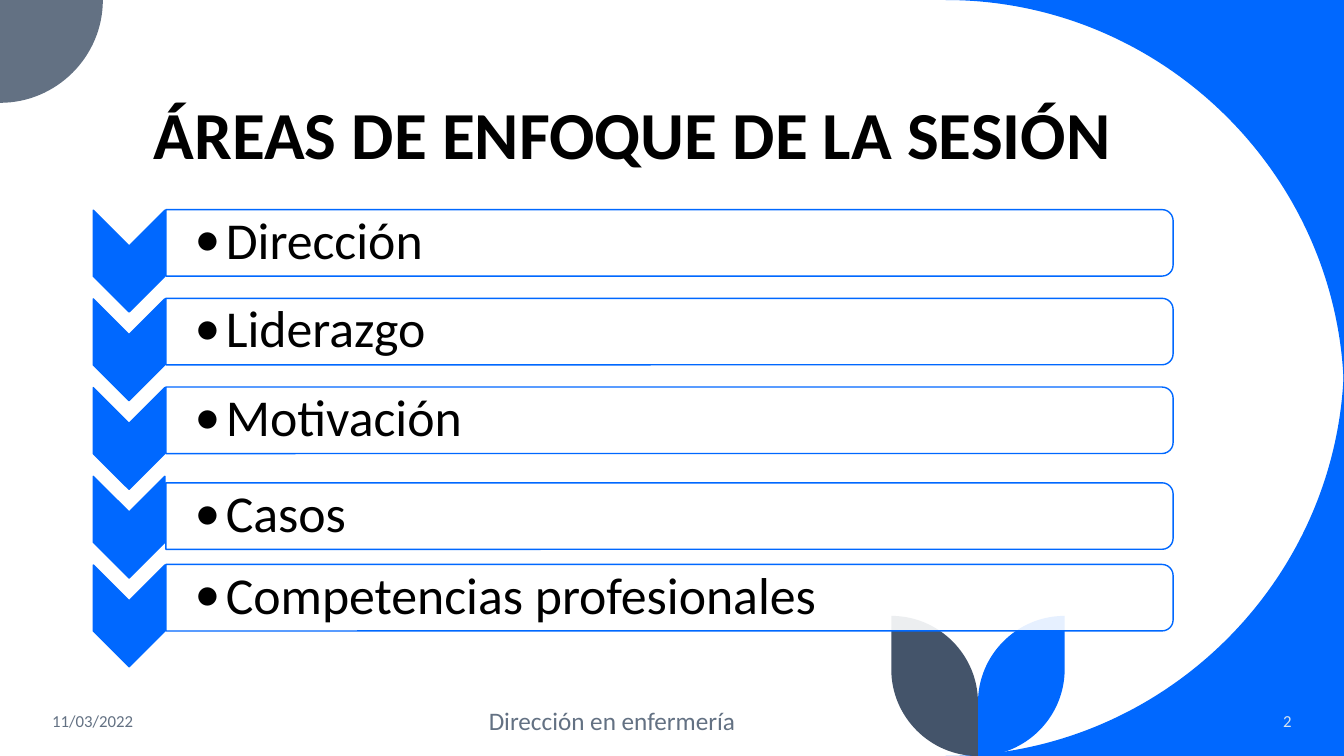
from dataclasses import dataclass

from lxml import etree
from pptx import Presentation
from pptx.dml.color import RGBColor
from pptx.enum.shapes import MSO_SHAPE
from pptx.enum.text import MSO_ANCHOR, PP_ALIGN
from pptx.oxml.ns import qn
from pptx.shapes.autoshape import Shape
from pptx.slide import Slide
from pptx.util import Inches, Pt

CHEVRON = MSO_SHAPE.CHEVRON
ROUNDED_TOP = MSO_SHAPE.ROUND_2_SAME_RECTANGLE
MIDDLE, BOTTOM = MSO_ANCHOR.MIDDLE, MSO_ANCHOR.BOTTOM
LEFT, CENTER, RIGHT = PP_ALIGN.LEFT, PP_ALIGN.CENTER, PP_ALIGN.RIGHT

Point = tuple[float, float]
Box = tuple[float, float, float, float]


@dataclass(frozen=True)
class Theme:
    font: str = "Calibri"
    blue: str = "0068FF"
    slate: str = "637183"
    navy: str = "44546A"
    pale: str = "DAE5EF"
    white: str = "FFFFFF"
    black: str = "000000"
    title_size: float = 48
    area_size: float = 37
    footer_size: float = 18
    small_size: float = 12


@dataclass(frozen=True)
class Area:
    name: str
    nudge: float = 0


@dataclass(frozen=True)
class Stroke:
    end: Point
    bend: Point | None = None


@dataclass(frozen=True)
class Ornament:
    start: Point
    strokes: list[Stroke]
    color: str


THEME = Theme()
WIDTH, HEIGHT = 13.33, 7.5
QUARTER_ARC = 0.55
FIRST_ROW_CENTER, ROW_PITCH = 2.41, 0.88
CHEVRON_DROP = 0.18
BULLET_INDENT = 0.31
AREAS = [
    Area("Dirección"),
    Area("Liderazgo"),
    Area("Motivación"),
    Area("Casos", nudge=0.07),
    Area("Competencias profesionales"),
]


def quarter(corner: Point, start: Point, end: Point, bend: Point, color: str) -> Ornament:
    return Ornament(corner, [Stroke(start), Stroke(end, bend)], color)


def leaf(stem: float, tip: float, color: str) -> Ornament:
    top, shoulder, notch = 6.11, 6.64, 6.97
    return Ornament((tip, top), [
        Stroke((tip, shoulder)),
        Stroke((stem, HEIGHT), bend=(tip, HEIGHT)),
        Stroke((stem, notch)),
        Stroke((tip, top), bend=(stem, top)),
    ], color)


def ornaments() -> list[Ornament]:
    sweep, disc, stem, leaf_width = 3.95, 1.02, 9.7, 0.86
    edge = WIDTH - sweep
    top_right, bottom_right = (WIDTH, 0), (WIDTH, HEIGHT)
    return [
        quarter(top_right, (edge, 0), (WIDTH, sweep), top_right, THEME.blue),
        quarter(bottom_right, (WIDTH, HEIGHT - sweep), (edge, HEIGHT), bottom_right,
                THEME.blue),
        quarter((0, 0), (disc, 0), (0, disc), (disc, disc), THEME.slate),
        leaf(stem, stem + leaf_width, THEME.blue),
        leaf(stem, stem - leaf_width, THEME.navy),
    ]


def paint(shape: Shape, fill: str, line: str | None = None, alpha: int = 100) -> None:
    shape.shadow.inherit = False
    shape.fill.solid()
    shape.fill.fore_color.rgb = RGBColor.from_string(fill)
    if alpha < 100:
        color = shape.fill._xPr.find(qn("a:solidFill"))[0]
        etree.SubElement(color, qn("a:alpha"), val=str(alpha * 1000))
    if line:
        shape.line.color.rgb = RGBColor.from_string(line)
        shape.line.width = Pt(1)
    else:
        shape.line.fill.background()


def toward(origin: Point, target: Point) -> Point:
    return (origin[0] + QUARTER_ARC * (target[0] - origin[0]),
            origin[1] + QUARTER_ARC * (target[1] - origin[1]))


def add_ornament(slide: Slide, ornament: Ornament) -> None:
    builder = slide.shapes.build_freeform(*map(Inches, ornament.start))
    builder.add_line_segments([tuple(map(Inches, s.end)) for s in ornament.strokes])
    shape = builder.convert_to_shape()
    segments = list(shape._element.iter(qn("a:lnTo")))
    position = ornament.start
    for stroke, segment in zip(ornament.strokes, segments):
        if stroke.bend:
            curve = etree.Element(qn("a:cubicBezTo"))
            controls = toward(position, stroke.bend), toward(stroke.end, stroke.bend)
            for x, y in (*controls, stroke.end):
                etree.SubElement(curve, qn("a:pt"), x=str(Inches(x) - shape.left),
                                 y=str(Inches(y) - shape.top))
            segment.getparent().replace(segment, curve)
        position = stroke.end
    paint(shape, ornament.color)


def add_turned(slide: Slide, kind: MSO_SHAPE, center: Point, length: float,
               thickness: float) -> Shape:
    left, top = center[0] - length / 2, center[1] - thickness / 2
    shape = slide.shapes.add_shape(
        kind, Inches(left), Inches(top), Inches(length), Inches(thickness))
    shape.rotation = 90
    return shape


def add_text(slide: Slide, text: str, box: Box, *, size: float, color: str,
             bold: bool = False, align: PP_ALIGN = LEFT, anchor: MSO_ANCHOR = MIDDLE,
             spacing: float = 1, insets: Box = (0.1, 0.05, 0.1, 0.05),
             bullet: bool = False) -> None:
    frame = slide.shapes.add_textbox(*map(Inches, box)).text_frame
    frame.word_wrap = True
    frame.vertical_anchor = anchor
    frame.margin_left, frame.margin_top, frame.margin_right, frame.margin_bottom = map(
        Inches, insets)
    paragraph = frame.paragraphs[0]
    paragraph.alignment = align
    paragraph.line_spacing = spacing
    if bullet:
        properties = paragraph._p.get_or_add_pPr()
        properties.set("marL", str(Inches(BULLET_INDENT)))
        properties.set("indent", str(-Inches(BULLET_INDENT)))
        etree.SubElement(properties, qn("a:buFont"), typeface=THEME.font)
        etree.SubElement(properties, qn("a:buChar"), char="•")
    run = paragraph.add_run()
    run.text = text
    run.font.name = THEME.font
    run.font.size = Pt(size)
    run.font.bold = bold
    run.font.color.rgb = RGBColor.from_string(color)


def add_area(slide: Slide, area: Area, row: int) -> None:
    row_center = FIRST_ROW_CENTER + row * ROW_PITCH
    chevron = add_turned(slide, CHEVRON, (1.28, row_center + CHEVRON_DROP), 1.01, 0.71)
    paint(chevron, THEME.blue, THEME.blue)
    bar_center = row_center + area.nudge
    bar = add_turned(slide, ROUNDED_TOP, (6.64, bar_center), 0.66, 9.99)
    paint(bar, THEME.white, THEME.blue, alpha=90)
    add_text(slide, area.name, (1.64, bar_center - 0.3, 9.95, 0.59),
             size=THEME.area_size, color=THEME.black, spacing=0.9,
             insets=(0.29, 0.03, 0.03, 0.03), bullet=True)


def main() -> None:
    deck = Presentation()
    deck.slide_width, deck.slide_height = Inches(WIDTH), Inches(HEIGHT)
    slide = deck.slides.add_slide(deck.slide_layouts[6])
    for ornament in ornaments():
        add_ornament(slide, ornament)
    add_text(slide, "ÁREAS DE ENFOQUE DE LA SESIÓN", (0.93, 0, 10.69, 1.78),
             size=THEME.title_size, color=THEME.black, bold=True,
             align=CENTER, anchor=BOTTOM, spacing=0.9)
    for row, area in enumerate(AREAS):
        add_area(slide, area, row)
    add_text(slide, "11/03/2022", (0.42, 6.95, 3, 0.4),
             size=THEME.small_size, color=THEME.slate)
    add_text(slide, "Dirección en enfermería", (3.23, 6.95, 5.68, 0.4),
             size=THEME.footer_size, color=THEME.slate, align=CENTER)
    add_text(slide, "2", (11.1, 6.95, 1.81, 0.4),
             size=THEME.small_size, color=THEME.pale, align=RIGHT)
    deck.save("out.pptx")


if __name__ == "__main__":
    main()
